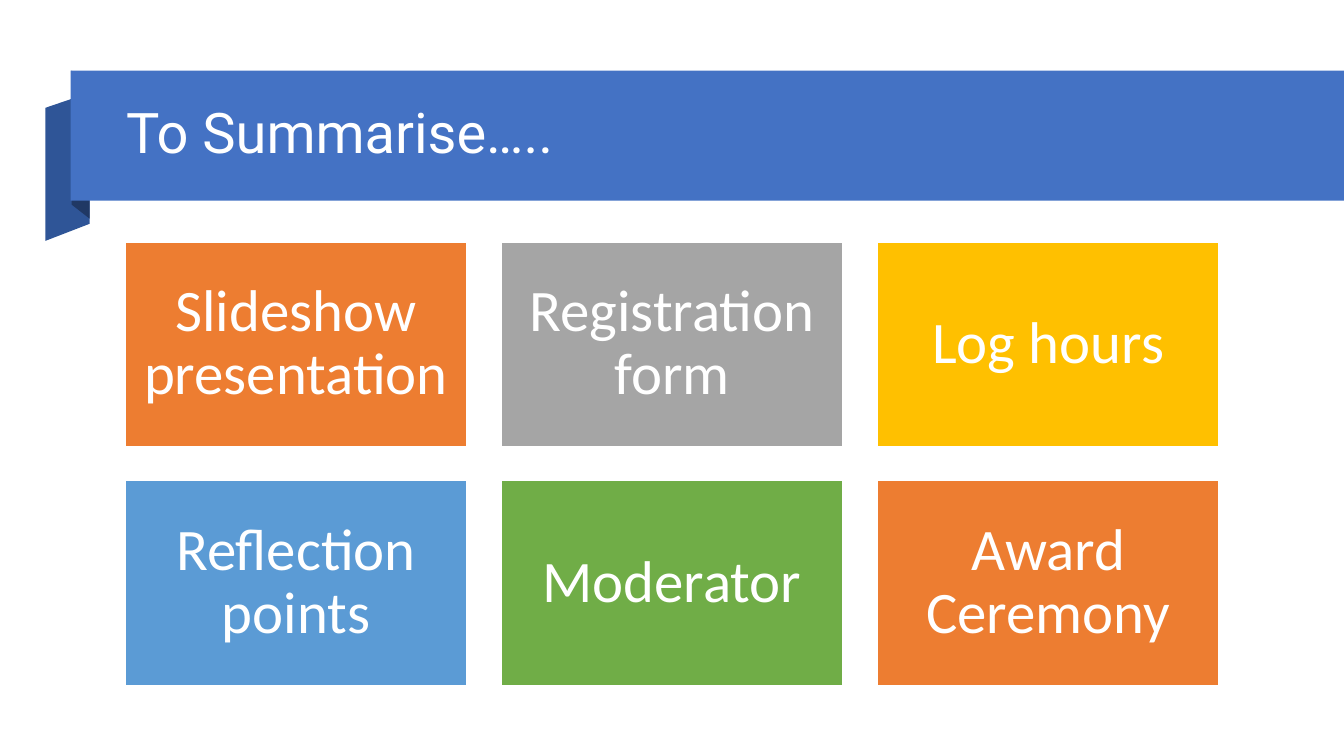
from pptx import Presentation
from pptx.dml.color import RGBColor
from pptx.enum.shapes import MSO_SHAPE as Shape
from pptx.enum.text import MSO_ANCHOR as Anchor, PP_ALIGN as Align
from pptx.util import Pt

PX = 9144  # EMU per px, 100 px to the inch
SLIDE_WIDTH, SLIDE_HEIGHT = 1333, 750

COLORS = {
    "white": "FFFFFF",
    "band": "4472C4",
    "ribbon": "2F5597",
    "fold": "203864",
    "orange": "ED7D31",
    "grey": "A5A5A5",
    "yellow": "FFC000",
    "blue": "5B9BD5",
    "green": "70AD47",
}

RIBBON_POINTS = [(89, 222), (45, 239), (45, 107), (89, 92)]
FOLD_POINTS = [(89, 217), (71, 203), (71, 70), (89, 85)]

CARDS = [
    ("Slideshow presentation", "orange"),
    ("Registration form", "grey"),
    ("Log hours", "yellow"),
    ("Reflection points", "blue"),
    ("Moderator", "green"),
    ("Award Ceremony", "orange"),
]
COLUMNS = 3
CARD_LEFT, CARD_TOP = 124, 240
CARD_WIDTH, CARD_HEIGHT, CARD_GAP = 339, 203, 34
CARD_MARGIN = 17


def rgb(name):
    return RGBColor.from_string(COLORS[name])


def set_attributes(target, values):
    for name, value in values.items():
        setattr(target, name, value)


def paint(shape, fill, line=None):
    shape.shadow.inherit = False
    shape.fill.solid()
    shape.fill.fore_color.rgb = rgb(fill)
    if line:
        shape.line.color.rgb = rgb(line)
        shape.line.width = Pt(1)
    else:
        shape.line.fill.background()


def add_polygon(slide, points, fill):
    builder = slide.shapes.build_freeform(*points[0], scale=PX)
    builder.add_line_segments(points[1:], close=True)
    paint(builder.convert_to_shape(), fill)


def add_rectangle(slide, left, top, width, height, fill, line=None):
    box = (value * PX for value in (left, top, width, height))
    shape = slide.shapes.add_shape(Shape.RECTANGLE, *box)
    paint(shape, fill, line)
    return shape


def write_text(shape, text, font, size, align, frame_format):
    frame = shape.text_frame
    frame.text = text
    set_attributes(frame, {"word_wrap": True, "vertical_anchor": Anchor.MIDDLE, **frame_format})
    paragraph = frame.paragraphs[0]
    set_attributes(paragraph, {"alignment": align, "line_spacing": 0.9})
    run_font = paragraph.runs[0].font
    set_attributes(run_font, {"name": font, "size": Pt(size)})
    run_font.color.rgb = rgb("white")


def add_title_banner(slide):
    add_polygon(slide, RIBBON_POINTS, "ribbon")
    add_polygon(slide, FOLD_POINTS, "fold")
    band = add_rectangle(slide, 70, 70, SLIDE_WIDTH - 70, 129, "band")
    title = slide.shapes.title
    set_attributes(title, {"left": 115 * PX, "top": 86 * PX, "width": 1127 * PX, "height": 96 * PX})
    write_text(title, "To Summarise…..", "Roboto", 40, Align.LEFT, {})
    band.element.addnext(title.element)  # the title lies in front of the band


def add_cards(slide):
    sides = ("left", "top", "right", "bottom")
    margins = {f"margin_{side}": CARD_MARGIN * PX for side in sides}
    for index, (text, color) in enumerate(CARDS):
        row, column = divmod(index, COLUMNS)
        left = CARD_LEFT + column * (CARD_WIDTH + CARD_GAP)
        top = CARD_TOP + row * (CARD_HEIGHT + CARD_GAP)
        card = add_rectangle(slide, left, top, CARD_WIDTH, CARD_HEIGHT, color, "white")
        write_text(card, text, "Calibri", 42, Align.CENTER, margins)


def main():
    presentation = Presentation()
    presentation.slide_width = SLIDE_WIDTH * PX
    presentation.slide_height = SLIDE_HEIGHT * PX
    slide = presentation.slides.add_slide(presentation.slide_layouts[5])
    add_title_banner(slide)
    add_cards(slide)
    presentation.save("out.pptx")


if __name__ == "__main__":
    main()
